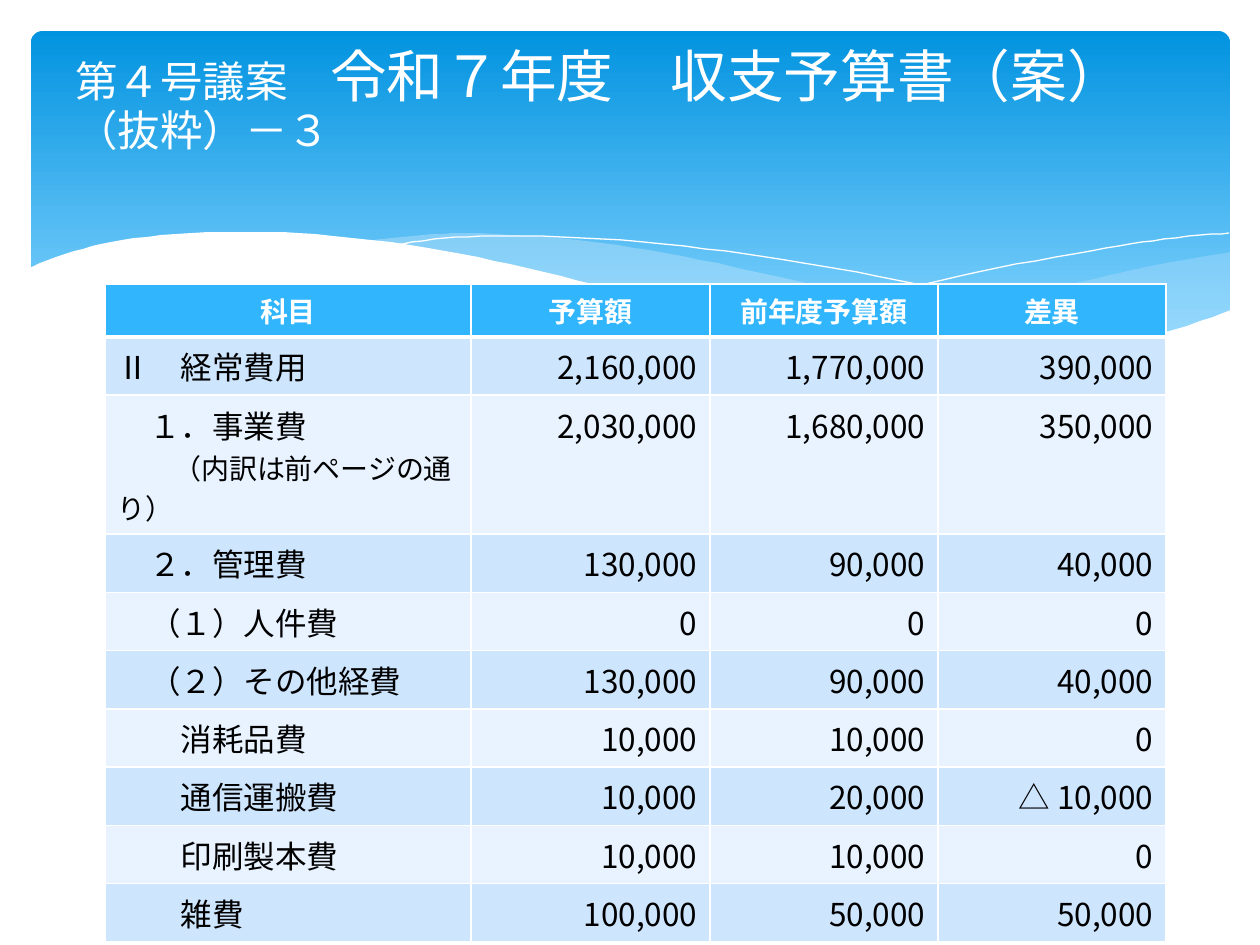
from lxml import etree
from pptx import Presentation
from pptx import util as u
from pptx.dml.color import RGBColor
from pptx.enum import lang, shapes, text
from pptx.oxml.ns import qn

SCALE = 914400 / 126  # EMU in one px
FONT = "Noto Sans CJK JP"


def px(length):
    return u.Emu(round(length * SCALE))


def color(value):
    return RGBColor.from_string(value)


def smooth(knots, steps=6):
    """Points of a Catmull-Rom curve through the knots."""
    padded = [knots[0], *knots, knots[-1]]
    points = []
    for a, b, c, d in zip(padded, padded[1:], padded[2:], padded[3:]):
        for step in range(steps):
            t = step / steps
            points.append(tuple(
                0.5 * (2 * q + (r - p) * t + (2 * p - 5 * q + 4 * r - s) * t ** 2
                       + (3 * q - p - 3 * r + s) * t ** 3)
                for p, q, r, s in zip(a, b, c, d)))
    return points + [knots[-1]]


class SlideBuilder:
    white = "FFFFFF"
    header_fill = "31B6FD"
    bands = ("CEE5FE", "E8F3FF")

    def __init__(self, slide):
        self.slide = slide

    def styled_run(self, paragraph, content, **values):
        run = paragraph.add_run()
        run.text = content
        values["language_id"] = lang.MSO_LANGUAGE_ID.JAPANESE
        font_color = values.pop("color")
        for name, value in values.items():
            setattr(run.font, name, value)
        run.font.color.rgb = color(font_color)

    def banner(self, left, top, width, height, stops):
        shape = self.slide.shapes.add_shape(
            shapes.MSO_SHAPE.ROUNDED_RECTANGLE, *map(px, (left, top, width, height)))
        shape.shadow.inherit = False
        shape.adjustments[0] = 0.034
        shape.line.fill.background()
        shape.fill.gradient()
        shape.fill.gradient_angle = 270
        for stop, (position, value) in zip(shape.fill.gradient_stops, stops):
            stop.position = position
            stop.color.rgb = color(value)

    def wave(self, *edges, fill=None, opacity=100, corners=()):
        points = [point for edge in edges for point in smooth(edge)] + list(corners)
        builder = self.slide.shapes.build_freeform(*points[0], scale=SCALE)
        builder.add_line_segments(points[1:], close=fill is not None)
        shape = builder.convert_to_shape()
        shape.shadow.inherit = False
        if fill is None:
            shape.fill.background()
            shape.line.color.rgb = color(self.white)
            shape.line.width = u.Pt(0)
            return
        shape.line.fill.background()
        shape.fill.solid()
        shape.fill.fore_color.rgb = color(fill)
        if opacity < 100:
            fill_color = shape._element.spPr.find(qn("a:solidFill"))[0]
            etree.SubElement(fill_color, qn("a:alpha"), val=str(opacity * 1000))

    def title(self, left, top, width, height, runs):
        shape = self.slide.shapes.title
        box = dict(left=left, top=top, width=width, height=height)
        for name, value in box.items():
            setattr(shape, name, px(value))
        frame = shape.text_frame
        settings = dict(word_wrap=True, auto_size=text.MSO_AUTO_SIZE.NONE,
                        vertical_anchor=text.MSO_ANCHOR.TOP, margin_top=px(2))
        for name, value in settings.items():
            setattr(frame, name, value)
        paragraph = frame.paragraphs[0]
        paragraph.alignment = text.PP_ALIGN.LEFT
        paragraph.line_spacing = 0.9
        for content, size in runs:
            self.styled_run(paragraph, content, size=u.Pt(size), name="Calibri",
                            color=self.white)
        self.slide.shapes._spTree.append(shape._element)  # bring to front

    def border(self, cell, widths):
        properties = cell._tc.get_or_add_tcPr()
        for index, (side, width) in enumerate(widths.items()):
            line = etree.Element(qn("a:ln" + side), w=str(u.Pt(width)))
            fill = etree.SubElement(line, qn("a:solidFill"))
            etree.SubElement(fill, qn("a:srgbClr"), val=self.white)
            properties.insert(index, line)

    def table(self, left, top, widths, heights, rows):
        frame = self.slide.shapes.add_table(
            len(rows), len(widths),
            *map(px, (left, top, sum(widths), sum(heights))))
        table = frame.table
        table.horz_banding = False
        for column, width in zip(table.columns, widths):
            column.width = px(width)
        for row, height in zip(table.rows, heights):
            row.height = px(height)
        for i, row in enumerate(rows):
            for j, content in enumerate(row):
                self.cell(table.cell(i, j), i, j, content)

    def cell(self, cell, i, j, content):
        header = i == 0
        cell.fill.solid()
        cell.fill.fore_color.rgb = color(
            self.header_fill if header else self.bands[(i - 1) % 2])
        self.border(cell, dict(L=1, R=1, T=3 if i == 1 else 1, B=3 if header else 1))
        align = text.PP_ALIGN
        for k, line in enumerate(content.split("\n")):
            frame = cell.text_frame
            paragraph = frame.add_paragraph() if k else frame.paragraphs[0]
            paragraph.alignment = (
                align.CENTER if header else align.RIGHT if j else align.LEFT)
            self.styled_run(paragraph, line, size=u.Pt(16 if header or k else 18),
                            name=FONT, bold=header,
                            color=self.white if header else "000000")


def main():
    presentation = Presentation()
    presentation.slide_width, presentation.slide_height = px(1260), px(945)
    slide = presentation.slides.add_slide(presentation.slide_layouts[5])
    builder = SlideBuilder(slide)

    # Banner with waves
    builder.banner(31, 31, 1199, 340, [(0, "0293E0"), (0.9, "83D3FE")])
    builder.wave(
        [(1230, 252), (1142, 268), (1085, 281), (949, 312), (833, 334)],
        [(833, 334), (906, 343), (1012, 350), (1110, 344), (1178, 330), (1230, 311)],
        fill="C6E7FC", opacity=29)
    builder.wave(
        [(1125, 344), (1017, 328), (890, 302), (793, 280), (682, 256),
         (586, 241), (479, 233), (413, 236), (360, 241)],
        [(360, 241), (456, 256), (566, 280), (713, 312), (838, 335),
         (942, 348), (1031, 350), (1125, 344)],
        fill="C6E7FC", opacity=40)
    builder.wave([(389, 246), (445, 238), (524, 236), (643, 242), (766, 257),
                  (876, 276), (1002, 304), (1143, 343)])
    builder.wave([(772, 324), (876, 296), (978, 272), (1091, 251),
                  (1164, 239), (1229, 233)])
    builder.wave(
        [(1231, 310), (1159, 334), (1071, 347), (999, 348), (892, 340),
         (760, 320), (634, 294), (527, 268), (428, 248), (315, 234),
         (223, 232), (134, 238), (74, 251), (29, 268)],
        fill="FFFFFF", corners=[(29, 415), (1231, 415)])

    # Title
    builder.title(63, 47, 1134, 173, [
        ("第４号議案　", 24.3), ("令和７年度　収支予算書（案）", 32.4), ("（抜粋）－３", 24.3)])

    # Budget table
    rows = [
        ("科目", "予算額", "前年度予算額", "差異"),
        ("Ⅱ　経常費用", "2,160,000", "1,770,000", "390,000"),
        ("　１．事業費\n　　（内訳は前ページの通り）", "2,030,000", "1,680,000", "350,000"),
        ("　２．管理費", "130,000", "90,000", "40,000"),
        ("　（１）人件費", "0", "0", "0"),
        ("　（２）その他経費", "130,000", "90,000", "40,000"),
        ("　　消耗品費", "10,000", "10,000", "0"),
        ("　　通信運搬費", "10,000", "20,000", "△ 10,000"),
        ("　　印刷製本費", "10,000", "10,000", "0"),
        ("　　雑費", "100,000", "50,000", "50,000"),
    ]
    builder.table(105, 284, [366, 239, 228, 228], [49] + [53] * 9, rows)

    presentation.save("out.pptx")


if __name__ == "__main__":
    main()
